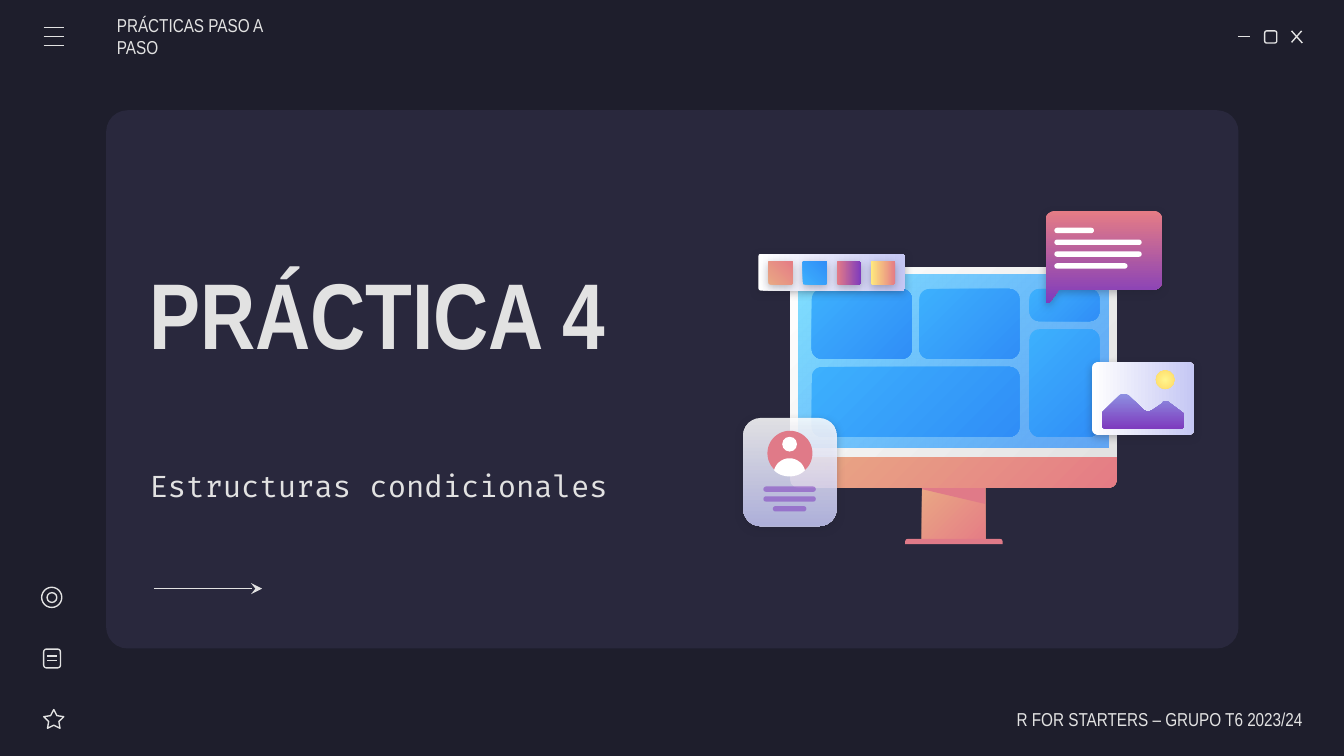
import dataclasses

import lxml.etree
import pptx
import pptx.dml.color
import pptx.enum.dml
import pptx.enum.shapes
import pptx.enum.text
import pptx.oxml.ns
import pptx.util

SHAPE = pptx.enum.shapes.MSO_SHAPE
ALIGN = pptx.enum.text.PP_ALIGN
CELL = pptx.util.Inches(0.1)
COLUMNS, ROWS = 100, 56.25


@dataclasses.dataclass(frozen=True)
class Blend:
    start: str
    end: str
    angle: int = 45
    radial: bool = False
    alphas: tuple = (100, 100)


@dataclasses.dataclass(frozen=True)
class Theme:
    night: str = "1E1E2C"
    panel: str = "29283D"
    ink: str = "E2E2E2"
    white: str = "FFFFFF"
    rose: str = "E07A88"
    violet: str = "7E3BBE"
    coral: Blend = Blend("E9A984", "E57C85")
    azure: Blend = Blend("3DB0FD", "308EF7")
    frame: Blend = Blend("FFFFFF", "E2E2E2")
    screen: Blend = Blend("80DFFF", "318FFA", alphas=(100, 72))
    paper: Blend = Blend("FFFFFF", "C5C7F4", 90)
    glass: Blend = Blend("FFFFFF", "C5C7F4", 90, alphas=(86, 86))
    sunset: Blend = Blend("E57C85", "7E3BBE", 90)
    hills: Blend = Blend("8D90E1", "7E3BBE", 90)
    dawn: Blend = Blend("FFEA7D", "E57C85", 90)
    sun: Blend = Blend("FFF68E", "FFD966", radial=True)
    narrow: str = "Arial Narrow"
    code: str = "Fira Code"
    title_size: int = 50
    subtitle_size: int = 16
    label_size: int = 10
    stroke: float = 0.75


THEME = Theme()


def cells(*values):
    return [round(value * CELL) for value in values]


def rgb(code):
    return pptx.dml.color.RGBColor.from_string(code)


def add_xml(parent, tag, **attributes):
    return lxml.etree.SubElement(parent, pptx.oxml.ns.qn(tag), attributes)


def set_alpha(shape, alphas):
    for color, alpha in zip(shape.element.spPr.iter(pptx.oxml.ns.qn("a:srgbClr")), alphas):
        if alpha < 100:
            add_xml(color, "a:alpha", val=str(alpha * 1000))


def paint_blend(shape, blend):
    shape.fill.gradient()
    for stop, color in zip(shape.fill.gradient_stops, (blend.start, blend.end)):
        stop.color.rgb = rgb(color)
    set_alpha(shape, blend.alphas)
    if blend.radial:
        gradient = shape.element.spPr.find(pptx.oxml.ns.qn("a:gradFill"))
        gradient.remove(gradient.find(pptx.oxml.ns.qn("a:lin")))
        circle = add_xml(gradient, "a:path", path="circle")
        add_xml(circle, "a:fillToRect", l="50000", t="50000", r="50000", b="50000")
    else:
        shape.fill.gradient_angle = 360 - blend.angle


def cast_shadow(shape):
    effects = shape.element.spPr.find(pptx.oxml.ns.qn("a:effectLst"))
    outer = add_xml(effects, "a:outerShdw", blurRad=str(pptx.util.Pt(4.5)),
                    dist=str(pptx.util.Pt(1.5)), dir="5400000", algn="bl", rotWithShape="0")
    color = add_xml(outer, "a:srgbClr", val=THEME.night)
    add_xml(color, "a:alpha", val="30000")


def paint(shape, fill, shadow=False, alpha=100):
    shape.shadow.inherit = False
    if fill is None:
        shape.fill.background()
        shape.line.color.rgb = rgb(THEME.ink)
        shape.line.width = pptx.util.Pt(THEME.stroke)
        return shape
    shape.line.fill.background()
    if isinstance(fill, Blend):
        paint_blend(shape, fill)
    else:
        shape.fill.solid()
        shape.fill.fore_color.rgb = rgb(fill)
        set_alpha(shape, [alpha])
    if shadow:
        cast_shadow(shape)
    return shape


def add_block(group, kind, box, fill=None, adjust=(), turn=0, **style):
    shape = group.shapes.add_shape(kind, *cells(*box))
    for index, value in enumerate(adjust):
        shape.adjustments[index] = value
    shape.rotation = turn
    return paint(shape, fill, **style)


def add_rounded(group, box, radius, fill=None, **style):
    adjust = [radius / min(box[2:])]
    return add_block(group, SHAPE.ROUNDED_RECTANGLE, box, fill, adjust, **style)


def curve_points(start, curve, steps=8):
    points = [start, curve[:2], curve[2:4], curve[4:]]
    weights = (1, 3, 3, 1)
    for step in range(1, steps + 1):
        t = step / steps
        yield tuple(sum(weights[k] * (1 - t) ** (3 - k) * t ** k * points[k][axis]
                        for k in range(4)) for axis in (0, 1))


def add_outline(group, start, segments, fill, **style):
    points = [start]
    for segment in segments:
        points += [segment] if len(segment) == 2 else curve_points(points[-1], segment)
    builder = group.shapes.build_freeform(*cells(*start))
    builder.add_line_segments([cells(*point) for point in points[1:]], close=True)
    return paint(builder.convert_to_shape(), fill, **style)


def add_line(group, *ends):
    line = group.shapes.add_connector(pptx.enum.shapes.MSO_CONNECTOR.STRAIGHT, *cells(*ends))
    line.line.color.rgb = rgb(THEME.ink)
    line.line.width = pptx.util.Pt(THEME.stroke)
    add_xml(line.element.spPr, "a:effectLst")
    return line


def write(box, text, size, font, bold=False, align=ALIGN.LEFT, left=1, right=1):
    frame = box.text_frame
    frame.text = text
    frame.word_wrap = True
    frame.auto_size = pptx.enum.text.MSO_AUTO_SIZE.NONE
    frame.vertical_anchor = pptx.enum.text.MSO_ANCHOR.MIDDLE
    frame.margin_left, frame.margin_right, frame.margin_top, frame.margin_bottom = cells(left, right, 1, 1)
    para = frame.paragraphs[0]
    para.alignment = align
    span = para.runs[0]
    span.font.size, span.font.name, span.font.bold = pptx.util.Pt(size), font, bold
    span.font.color.rgb = rgb(THEME.ink)


def add_label(page, box, text, size, font, **style):
    write(page.shapes.add_textbox(*cells(*box)), text, size, font, **style)


def add_title(page):
    title = page.shapes.title
    title.left, title.top, title.width, title.height = cells(10.1, 14.4, 44.7, 17.6)
    write(title, "PRÁCTICA 4", THEME.title_size, THEME.narrow, bold=True)
    panel = add_rounded(page, (7.9, 8.2, 84.25, 40.05), 1.6, THEME.panel)
    title.element.addprevious(panel.element)


def add_window_icons(page):
    group = page.shapes.add_group_shape()
    add_line(group, 92.1, 2.7, 93, 2.7)
    add_rounded(group, (94.1, 2.3, 0.9, 0.9), 0.15)
    add_line(group, 96.1, 2.3, 96.9, 3.2)
    add_line(group, 96.85, 2.3, 96.1, 3.15)
    menu = page.shapes.add_group_shape()
    for row in range(3):
        y = 2.05 + 0.67 * row
        add_line(menu, 3.25, y, 4.75, y)


def add_sidebar(page):
    group = page.shapes.add_group_shape()
    add_block(group, SHAPE.STAR_5_POINT, (3.25, 52.8, 1.5, 1.4), adjust=[0.254])
    add_rounded(group, (3.25, 48.3, 1.25, 1.4), 0.21)
    for y in (48.8, 49.15):
        add_line(group, 3.5, y, 4.25, y)
    for x, y, size in ((3.1, 43.7, 1.5), (3.5, 44.1, 0.73)):
        add_block(group, SHAPE.OVAL, (x, y, size, size))


def add_monitor(page):
    group = page.shapes.add_group_shape()
    half_round = SHAPE.ROUND_2_SAME_RECTANGLE
    add_block(group, SHAPE.RECTANGLE, (68.6, 36.1, 4.7, 4.3), THEME.coral)
    add_block(group, half_round, (67.35, 40.1, 7.25, 0.4), THEME.rose, [0.5, 0])
    add_outline(group, (68.6, 36.1), [(68.6, 36.4), (73.3, 37.5), (73.3, 36.1)], THEME.rose)
    add_block(group, half_round, (58.8, 33.9, 24.3, 2.4), THEME.coral, [0, 0.26])
    add_block(group, half_round, (58.8, 19.9, 24.3, 14.1), THEME.frame, [0.04, 0])
    add_block(group, SHAPE.RECTANGLE, (59.4, 20.4, 23.1, 12.9), THEME.screen)
    tiles = ((60.4, 21.5, 7.45, 5.2), (60.4, 27.3, 15.45, 5.2), (68.4, 21.5, 7.45, 5.2),
             (76.6, 21.5, 5.2, 2.4), (76.6, 24.5, 5.2, 8))
    for tile in tiles:
        add_rounded(group, tile, 0.75, THEME.azure)


def add_speech_bubble(page):
    group = page.shapes.add_group_shape()
    add_outline(group, (78.5, 15.7), [
        (78.1, 15.7, 77.8, 16, 77.8, 16.4), (77.8, 22.4), (77.8, 22.6, 77.9, 22.6, 78.1, 22.5),
        (78.8, 21.55), (85.9, 21.55), (86.2, 21.55, 86.5, 21.2, 86.5, 20.9),
        (86.5, 16.4), (86.5, 16, 86.2, 15.7, 85.9, 15.7)], THEME.sunset, shadow=True)
    for row, width in enumerate((2.95, 6.5, 6.5, 5.45)):
        add_rounded(group, (78.45, 16.95 + 0.88 * row, width, 0.4), 0.2, THEME.white)


def add_contact_card(page):
    group = page.shapes.add_group_shape()
    add_rounded(group, (55.3, 31.1, 6.95, 8.05), 1.3, THEME.glass, shadow=True)
    add_block(group, SHAPE.OVAL, (57.1, 32.05, 3.35, 3.35), THEME.rose)
    add_block(group, SHAPE.OVAL, (58.2, 32.5, 1.1, 1.1), THEME.white)
    add_outline(group, (58.75, 34.1), [
        (58.2, 34.1, 57.7, 34.5, 57.6, 35), (57.9, 35.3, 58.3, 35.45, 58.75, 35.45),
        (59.2, 35.45, 59.6, 35.3, 59.9, 35), (59.8, 34.5, 59.3, 34.1, 58.75, 34.1)], THEME.white)
    for row, width in enumerate((3.9, 3.9, 2.5)):
        box = (58.75 - width / 2, 36.2 + 0.73 * row, width, 0.4)
        add_rounded(group, box, 0.2, THEME.violet, alpha=54)


def add_photo_card(page):
    group = page.shapes.add_group_shape()
    add_rounded(group, (82.35, 25.85, 5.4, 7.6), 0.4, THEME.paper, turn=270, shadow=True)
    add_outline(group, (83.6, 29.3), [
        (83.5, 29.3, 83.4, 29.3, 83.3, 29.4), (82.1, 30.6), (82, 30.7, 82, 30.7, 82, 30.8),
        (82, 31.6), (82, 31.8, 82.1, 31.9, 82.3, 31.9), (87.8, 31.9),
        (88, 31.9, 88.1, 31.8, 88.1, 31.6), (88.1, 30.9), (88.1, 30.8, 88, 30.7, 88, 30.7),
        (87, 29.95), (86.9, 29.85, 86.8, 29.85, 86.7, 29.85),
        (86.6, 29.85, 86.5, 29.9, 86.5, 30), (85.7, 30.55),
        (85.6, 30.6, 85.5, 30.6, 85.4, 30.6), (85.3, 30.6, 85.2, 30.6, 85.1, 30.5),
        (83.95, 29.4), (83.8, 29.3, 83.7, 29.3, 83.6, 29.3)], THEME.hills)
    add_block(group, SHAPE.OVAL, (86, 27.55, 1.4, 1.4), THEME.sun)


def add_palette(page):
    group = page.shapes.add_group_shape()
    add_rounded(group, (60.5, 14.8, 2.75, 10.9), 0.2, THEME.paper, turn=270, shadow=True)
    for column, blend in enumerate((THEME.coral, THEME.azure, THEME.sunset, THEME.dawn)):
        box = (57.2 + 2.54 * column, 19.4, 1.75, 1.8)
        add_rounded(group, box, 0.12, blend, turn=270, shadow=True)


def add_arrow(page):
    arrow = add_line(page, 11.45, 43.8, 19.5, 43.8)
    stroke = arrow.element.spPr.find(pptx.oxml.ns.qn("a:ln"))
    add_xml(stroke, "a:tailEnd", type="stealth", w="med", len="med")


def main():
    deck = pptx.Presentation()
    deck.slide_width, deck.slide_height = cells(COLUMNS, ROWS)
    page = deck.slides.add_slide(deck.slide_layouts[5])
    page.background.fill.solid()
    page.background.fill.fore_color.rgb = rgb(THEME.night)
    add_title(page)
    add_label(page, (10.15, 33.8, 37.1, 4.6), "Estructuras condicionales", THEME.subtitle_size, THEME.code)
    add_label(page, (8.7, 1.2, 14.3, 3), "PRÁCTICAS PASO A PASO", THEME.label_size, THEME.narrow, left=0)
    add_label(page, (73.3, 52, 23.6, 3), "R FOR STARTERS – GRUPO T6 2023/24",
              THEME.label_size, THEME.narrow, align=ALIGN.RIGHT, right=0)
    for draw in (add_window_icons, add_monitor, add_speech_bubble, add_contact_card,
                 add_photo_card, add_palette, add_sidebar, add_arrow):
        draw(page)
    deck.save("out.pptx")


if __name__ == "__main__":
    main()
